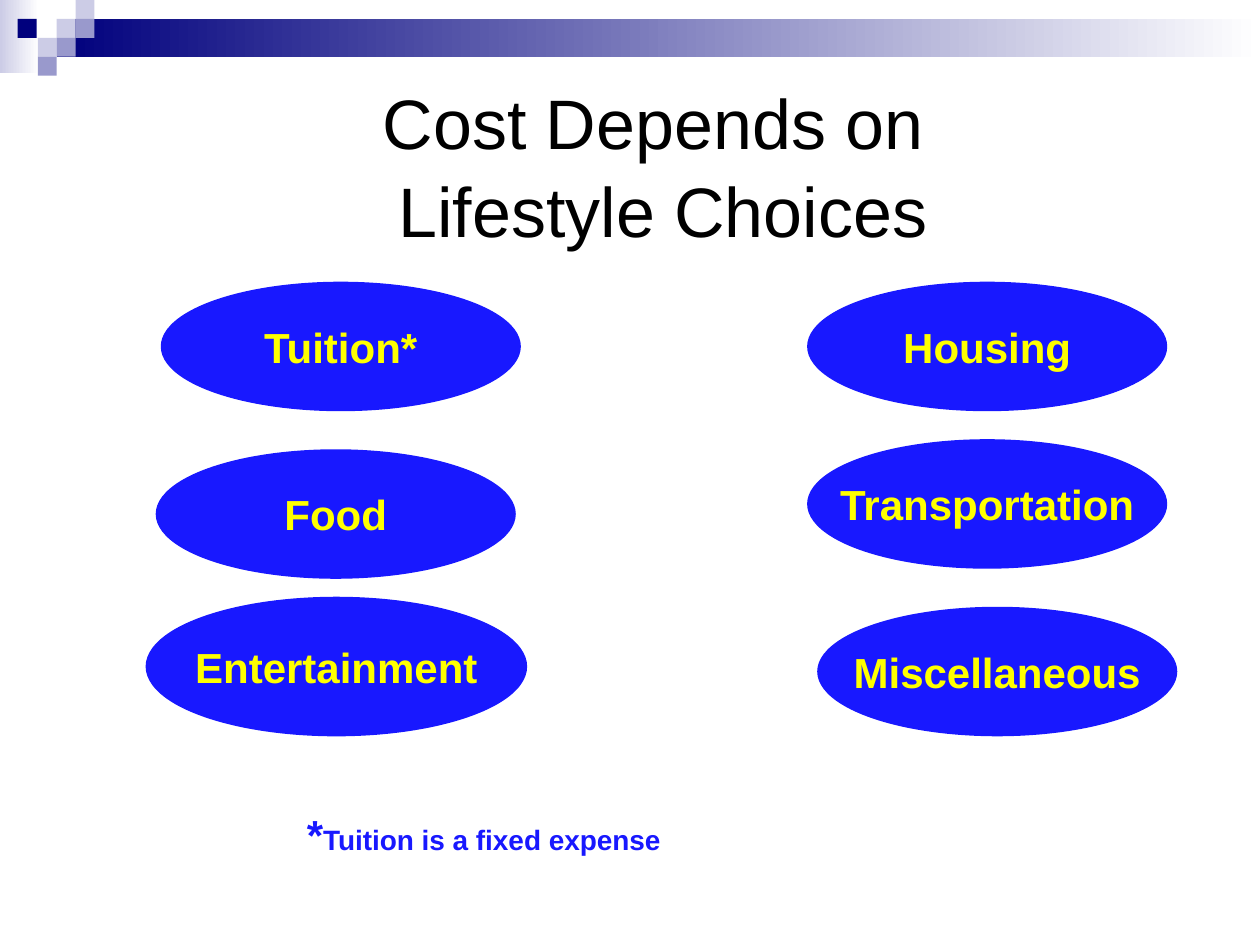
from pptx import Presentation
from pptx.dml.color import RGBColor
from pptx.enum.shapes import MSO_SHAPE
from pptx.enum.text import MSO_ANCHOR, PP_ALIGN
from pptx.util import Inches, Pt

NAVY = RGBColor(0x00, 0x00, 0x7D)
LAVENDER = RGBColor(0xCC, 0xCC, 0xE6)
PERIWINKLE = RGBColor(0x99, 0x99, 0xCC)
BLUE = RGBColor(0x18, 0x18, 0xFF)
YELLOW = RGBColor(0xFF, 0xFF, 0x00)
WHITE = RGBColor(0xFF, 0xFF, 0xFF)
BLACK = RGBColor(0x00, 0x00, 0x00)

SQUARE = 0.15
SQUARES = [
    (0.45, 0.15, LAVENDER),
    (0.6, 0, LAVENDER),
    (0.6, 0.15, PERIWINKLE),
    (0.3, 0.3, LAVENDER),
    (0.14, 0.15, NAVY),
    (0.45, 0.3, PERIWINKLE),
    (0.3, 0.45, PERIWINKLE),
]
EXPENSES = [
    ("Tuition*", 1.29, 2.25, 2.83, 1),
    ("Housing", 6.42, 2.25, 2.83, 1),
    ("Food", 1.25, 3.58, 2.83, 1),
    ("Transportation", 6.42, 3.5, 2.83, 1),
    ("Entertainment", 1.17, 4.75, 3, 1.08),
    ("Miscellaneous", 6.5, 4.83, 2.83, 1),
]


class SlideBuilder:
    font_name = "Arial"

    def __init__(self, page):
        self.page = page

    def shape(self, kind, left, top, width, height, color=None):
        shape = self.page.shapes.add_shape(
            kind, Inches(left), Inches(top), Inches(width), Inches(height))
        shape.shadow.inherit = False
        shape.line.fill.background()
        if color is not None:
            shape.fill.solid()
            shape.fill.fore_color.rgb = color
        return shape

    def square(self, left, top, color):
        self.shape(MSO_SHAPE.RECTANGLE, left, top, SQUARE, SQUARE, color)

    def gradient_band(self, left, top, width, height, color):
        band = self.shape(MSO_SHAPE.RECTANGLE, left, top, width, height)
        band.fill.gradient()
        band.fill.gradient_angle = 0
        for stop, stop_color, position in zip(
                band.fill.gradient_stops, (color, WHITE), (0, 1)):
            stop.color.rgb = stop_color
            stop.position = position

    def format_span(self, span, size, color, bold):
        span.font.name = self.font_name
        span.font.size = Pt(size)
        span.font.bold = bold
        span.font.color.rgb = color

    def title(self, text, left, top, width, height):
        box = self.page.shapes.add_textbox(
            Inches(left), Inches(top), Inches(width), Inches(height))
        frame = box.text_frame
        frame.word_wrap = True
        frame.vertical_anchor = MSO_ANCHOR.MIDDLE
        frame.text = text
        para = frame.paragraphs[0]
        para.alignment = PP_ALIGN.CENTER
        para.line_spacing = 1.05
        for span in para.runs:
            self.format_span(span, 40, BLACK, False)

    def expense(self, text, left, top, width, height):
        oval = self.shape(MSO_SHAPE.OVAL, left, top, width, height, BLUE)
        oval.line.color.rgb = BLUE
        oval.line.width = Pt(2)
        frame = oval.text_frame
        frame.word_wrap = False
        frame.vertical_anchor = MSO_ANCHOR.MIDDLE
        frame.text = text
        para = frame.paragraphs[0]
        para.alignment = PP_ALIGN.CENTER
        self.format_span(para.runs[0], 24, YELLOW, True)

    def footnote(self, mark, text, left, top, width, height):
        oval = self.shape(MSO_SHAPE.OVAL, left, top, width, height, WHITE)
        frame = oval.text_frame
        frame.word_wrap = True
        frame.vertical_anchor = MSO_ANCHOR.MIDDLE
        para = frame.paragraphs[0]
        para.alignment = PP_ALIGN.LEFT
        for words, size in ((mark, 24), (text, 16)):
            span = para.add_run()
            span.text = words
            self.format_span(span, size, BLUE, True)


def main():
    deck = Presentation()
    deck.slide_width = Inches(10)
    deck.slide_height = Inches(7.5)
    builder = SlideBuilder(deck.slides.add_slide(deck.slide_layouts[6]))

    builder.gradient_band(0, 0, 0.31, 0.58, LAVENDER)
    builder.gradient_band(0.45, 0.15, 9.55, 0.3, NAVY)
    for square in SQUARES:
        builder.square(*square)
    builder.title("Cost Depends on \vLifestyle Choices", 1, 0.67, 8.52, 1.25)
    for expense in EXPENSES:
        builder.expense(*expense)
    builder.footnote("*", "Tuition is a fixed expense", 1.25, 6.08, 7.42, 1.08)

    deck.save("out.pptx")


if __name__ == "__main__":
    main()
